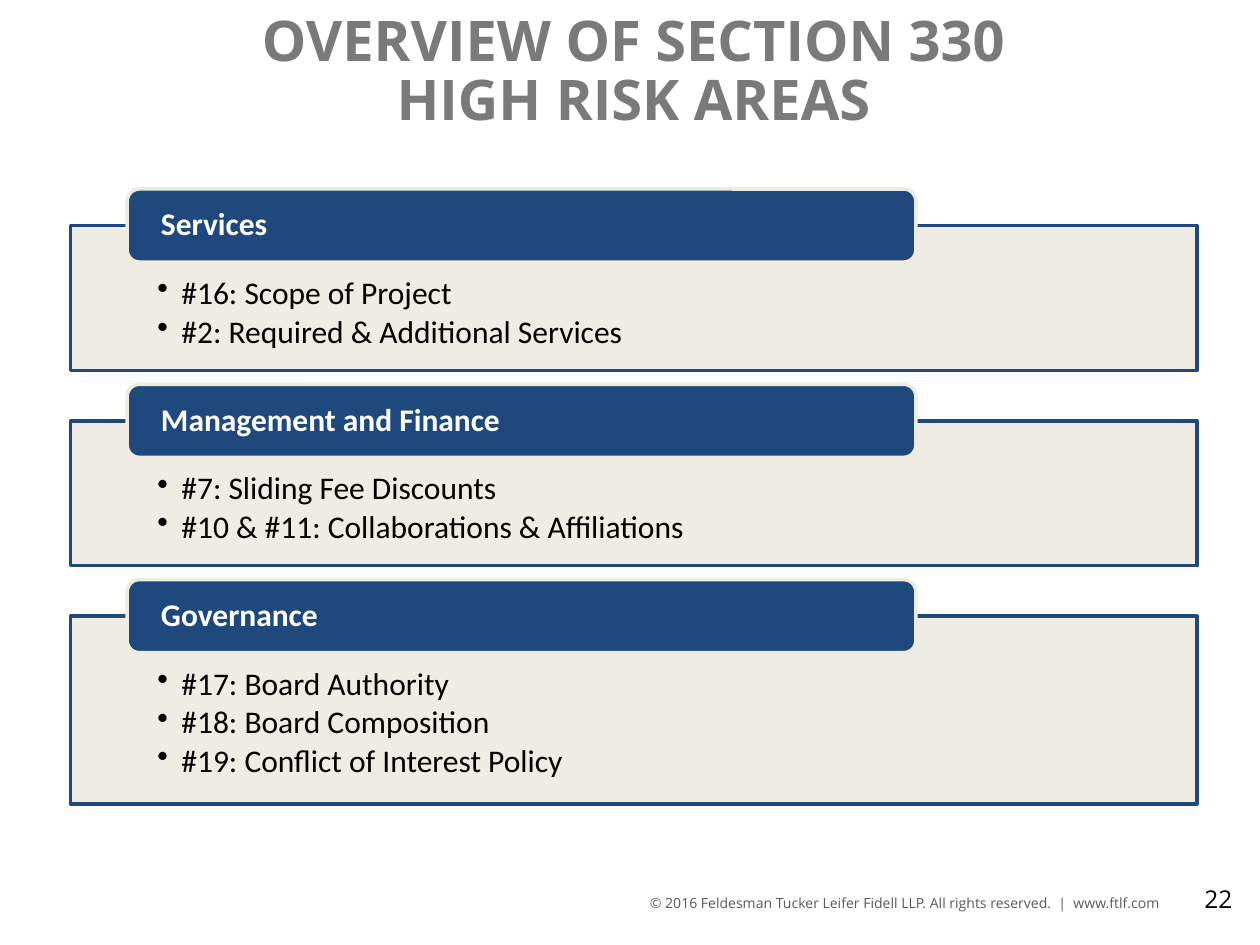
from pptx import Presentation, util as u
from pptx.dml.color import RGBColor
from pptx.enum import shapes, text
from pptx.oxml.ns import qn
from lxml import etree

# Content
TITLE = "OVERVIEW OF SECTION 330\nHIGH RISK AREAS"
SECTIONS = [
    ("Services", ["#16: Scope of Project", "#2: Required & Additional Services"]),
    ("Management and Finance",
     ["#7: Sliding Fee Discounts", "#10 & #11: Collaborations & Affiliations"]),
    ("Governance",
     ["#17: Board Authority", "#18: Board Composition",
      "#19: Conflict of Interest Policy"]),
]
FOOTER = ("© 2016 Feldesman Tucker Leifer Fidell LLP. All rights reserved.  |  "
          "www.ftlf.com")
PAGE = "22"

THEME = dict(
    navy="1F497D", cream="EEECE1", grey="7A7A7A", footer="595959",
    black="000000", white="FFFFFF", head="Open Sans", body="Calibri",
    title_pt=32, body_pt=18, page_pt=14, footer_pt=8, line_pt=2,
)

# Layout in inches
PANEL_X, PANEL_W = 0.56, 8.94
TAB_X, TAB_W, TAB_H = 1.01, 6.26, 0.58
TOP, GAP = 1.5, 0.11
PANEL_BASE, ROW_H = 0.47, 0.34
INDENT = 0.19


def color(name):
    return RGBColor.from_string(THEME[name])


def write(tf, lines, font, size, ink, bold=False, align=text.PP_ALIGN.LEFT,
          spacing=None, after=0, bullet=False):
    for i, line in enumerate(lines):
        p = tf.paragraphs[0] if i == 0 else tf.add_paragraph()
        p.text = line
        p.alignment = align
        p.line_spacing = spacing
        p.space_after = u.Pt(after)
        if bullet:
            pPr = p._p.get_or_add_pPr()
            pPr.set("marL", str(u.Inches(INDENT)))
            pPr.set("indent", str(-u.Inches(INDENT)))
            etree.SubElement(pPr, qn("a:buChar")).set("char", "•")
        for r in p.runs:
            r.font.name = THEME[font]
            r.font.size = u.Pt(THEME[size])
            r.font.bold = bold
            r.font.color.rgb = color(ink)


def set_frame(tf, left, top, right, bottom, anchor=text.MSO_ANCHOR.TOP):
    tf.word_wrap = True
    tf.vertical_anchor = anchor
    tf.margin_left, tf.margin_top = u.Inches(left), u.Inches(top)
    tf.margin_right, tf.margin_bottom = u.Inches(right), u.Inches(bottom)


def add_label(s, box, margins, lines, *style, **options):
    tf = s.shapes.add_textbox(*map(u.Inches, box)).text_frame
    set_frame(tf, *margins)
    write(tf, lines, *style, **options)


def add_box(s, kind, box, fill, line):
    sp = s.shapes.add_shape(kind, *map(u.Inches, box))
    sp.shadow.inherit = False
    sp.fill.solid()
    sp.fill.fore_color.rgb = color(fill)
    sp.line.color.rgb = color(line)
    sp.line.width = u.Pt(THEME["line_pt"])
    return sp


def add_section(s, y, heading, items):
    """Draw one panel with its heading tab and return the bottom edge."""
    panel_y = y + TAB_H / 2
    panel_h = PANEL_BASE + ROW_H * len(items)

    # Panel, 90% opaque
    sp = add_box(s, shapes.MSO_SHAPE.RECTANGLE,
                 (PANEL_X, panel_y, PANEL_W, panel_h), "cream", "navy")
    rgb = sp._element.spPr.find(qn("a:solidFill")).find(qn("a:srgbClr"))
    etree.SubElement(rgb, qn("a:alpha")).set("val", "90000")
    set_frame(sp.text_frame, 0.69, 0.41, 0.69, 0.14)
    write(sp.text_frame, items, "body", "body_pt", "black",
          spacing=0.9, after=2.7, bullet=True)

    # Heading tab
    sp = add_box(s, shapes.MSO_SHAPE.ROUNDED_RECTANGLE,
                 (TAB_X, y, TAB_W, TAB_H), "navy", "cream")
    set_frame(sp.text_frame, 0.24, 0, 0.24, 0, text.MSO_ANCHOR.MIDDLE)
    write(sp.text_frame, [heading], "body", "body_pt", "white",
          bold=True, spacing=0.9)
    return panel_y + panel_h


def main():
    prs = Presentation()
    prs.slide_width, prs.slide_height = u.Inches(10), u.Inches(7.5)
    s = prs.slides.add_slide(prs.slide_layouts[6])

    # Footer and page number
    add_label(s, (5.06, 7.05, 4.34, 0.27), (0.1, 0.05, 0, 0.05), [FOOTER],
              "head", "footer_pt", "footer")
    add_label(s, (9.3, 6.97, 0.58, 0.4), (0.1, 0.05, 0.1, 0.05), [PAGE],
              "head", "page_pt", "black", align=text.PP_ALIGN.RIGHT)

    # Title
    add_label(s, (0.17, 0.02, 9.72, 1.09), (0.1, 0.09, 0.1, 0), [TITLE],
              "head", "title_pt", "grey", bold=True,
              align=text.PP_ALIGN.CENTER, spacing=0.88)

    # Stacked sections
    y = TOP
    for heading, items in SECTIONS:
        y = add_section(s, y, heading, items) + GAP

    prs.save("out.pptx")


if __name__ == "__main__":
    main()
